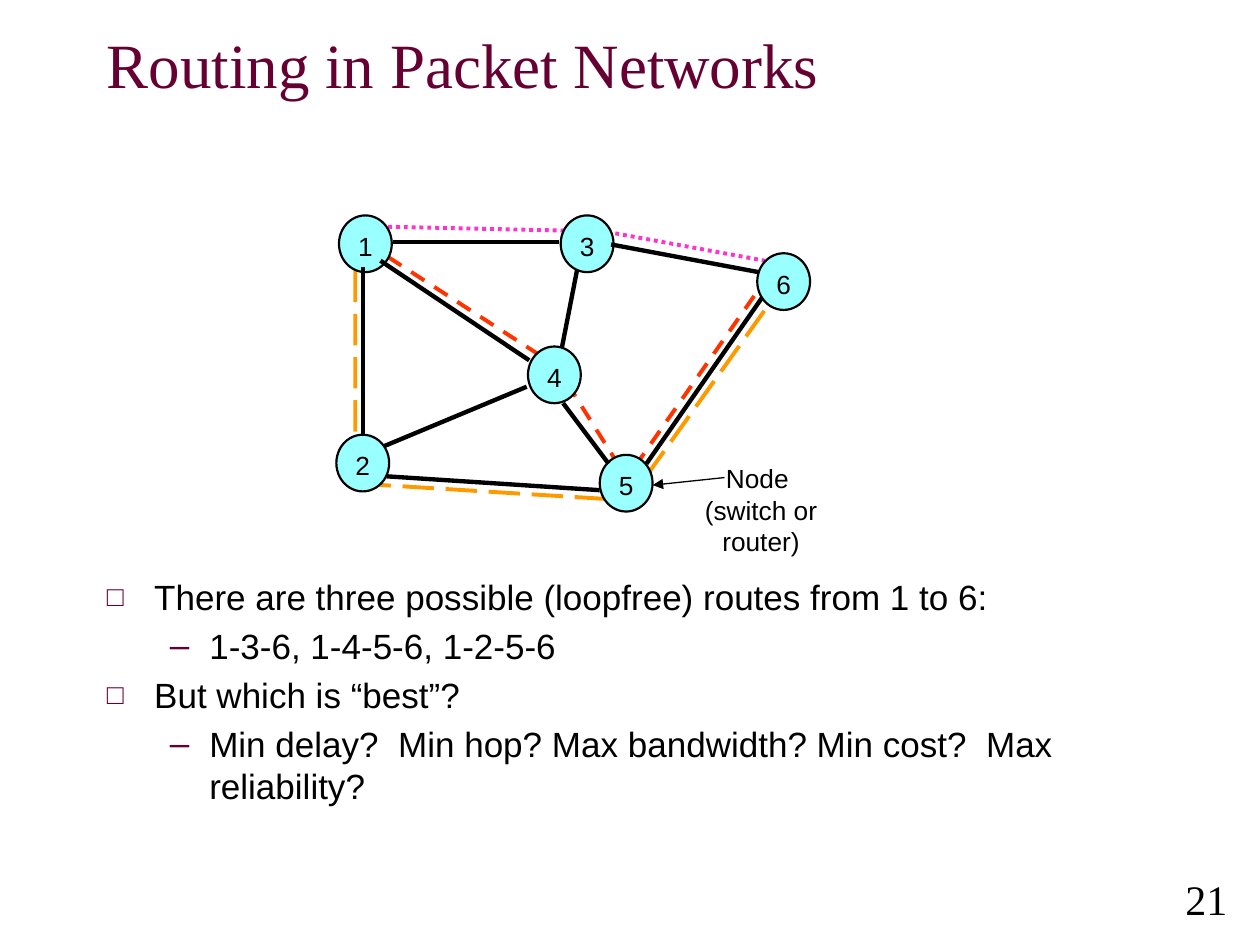
"""Build a slide on routing in packet networks: a six-node graph with three routes."""
from lxml import etree
from pptx import Presentation
from pptx.dml.color import RGBColor
from pptx.enum.dml import MSO_LINE
from pptx.enum.shapes import MSO_CONNECTOR, MSO_SHAPE
from pptx.enum.text import MSO_ANCHOR, PP_ALIGN
from pptx.oxml.ns import qn
from pptx.util import Pt

DASH, DOT, LONG_DASH = MSO_LINE.DASH, MSO_LINE.ROUND_DOT, MSO_LINE.LONG_DASH
STRAIGHT, ELLIPSE = MSO_CONNECTOR.STRAIGHT, MSO_SHAPE.OVAL
TOP, MIDDLE = MSO_ANCHOR.TOP, MSO_ANCHOR.MIDDLE
LEFT, CENTER, RIGHT = PP_ALIGN.LEFT, PP_ALIGN.CENTER, PP_ALIGN.RIGHT
BLACK, MAROON, CYAN = "000000", "660033", "99FFFF"

deck = Presentation()
deck.slide_width, deck.slide_height = Pt(720), Pt(540)
page = deck.slides.add_slide(deck.slide_layouts[6])
shapes = page.shapes


def color(value):
    return RGBColor.from_string(value)


def add_text(place, lines, size, font="Arial", tint=BLACK, align=LEFT, anchor=TOP, wrap=True, insets=(7.2, 3.6)):
    frame = shapes.add_textbox(*map(Pt, place)).text_frame
    frame.word_wrap, frame.vertical_anchor = wrap, anchor
    frame.margin_left = frame.margin_right = Pt(insets[0])
    frame.margin_top = frame.margin_bottom = Pt(insets[1])
    frame.text = "\n".join(lines)
    for para in frame.paragraphs:
        para.alignment = align
        para.font.size, para.font.name = Pt(size), font
        para.font.color.rgb = color(tint)
    return frame


add_text((618.5, 495.4, 90, 36.7), ["21"], 24, "Times New Roman", align=RIGHT)
add_text((54, 0, 612, 72), ["Routing in Packet Networks"], 36, "Times New Roman", MAROON, anchor=MIDDLE)

bullets = [
    (0, "There are three possible (loopfree) routes from 1 to 6:"),
    (1, "1-3-6, 1-4-5-6, 1-2-5-6"),
    (0, "But which is “best”?"),
    (1, "Min delay?  Min hop? Max bandwidth? Min cost?  Max reliability?"),
]
levels = [(27, 27, "80000", "□"), (58.5, 22.5, "100000", "–")]
body = add_text((54, 325.4, 617.8, 154.8), [text for _, text in bullets], 20)
for index, ((level, _), para) in enumerate(zip(bullets, body.paragraphs)):
    margin, hang, scale, mark = levels[level]
    para.level, para.line_spacing = level, Pt(24)
    para.space_before = Pt(4 if index else 0)
    props = para._p.get_or_add_pPr()
    props.set("marL", str(Pt(margin)))
    props.set("indent", str(-Pt(hang)))
    spacing_end = props.index(props.find(qn("a:defRPr")))
    tint = etree.Element(qn("a:buClr"))
    etree.SubElement(tint, qn("a:srgbClr"), val=MAROON)
    ratio = etree.Element(qn("a:buSzPct"), val=scale)
    face = etree.Element(qn("a:buFont"), typeface="Arial")
    sign = etree.Element(qn("a:buChar"), char=mark)
    for offset, element in enumerate((tint, ratio, face, sign)):
        props.insert(spacing_end + offset, element)

routes = [
    ("FF3300", DASH, [(221.8, 146.9), (307.4, 202.3), (327.6, 224.6), (352.1, 263.5),
                      (360, 265.7), (365, 263.5), (433.4, 165.6)]),
    ("FF33CC", DOT, [(221.8, 129.6), (322.6, 131.8), (350.6, 133.2), (437, 149)]),
    ("FF9900", LONG_DASH, [(203, 154.8), (203, 249.8), (200.2, 269.3), (205.2, 275.8), (218.2, 277.2),
                           (345.6, 285.1), (360.7, 286.6), (369.4, 275.8), (370.8, 270), (439.2, 174.2)]),
]
for tint, dash, points in routes:
    start, *rest = [(Pt(x), Pt(y)) for x, y in points]
    builder = shapes.build_freeform(*start)
    builder.add_line_segments(rest, close=False)
    route = builder.convert_to_shape()
    route.shadow.inherit = False
    route.fill.background()
    route.line.color.rgb = color(tint)
    route.line.width, route.line.dash_style = Pt(2.25), dash

nodes = [(193.7, 123.1), (192.2, 248.4), (320.4, 123.1), (301.7, 198), (342.7, 259.9), (432.7, 144.7)]
for number, (left, top) in enumerate(nodes, 1):
    node = shapes.add_shape(ELLIPSE, Pt(left), Pt(top), Pt(30.2), Pt(32.4))
    node.shadow.inherit = False
    node.fill.solid()
    node.fill.fore_color.rgb = color(CYAN)
    node.line.color.rgb = color(BLACK)
    node.line.width = Pt(1.25)
    frame = node.text_frame
    frame.margin_left = frame.margin_right = frame.margin_bottom = 0
    frame.margin_top = Pt(2.5)
    frame.word_wrap, frame.vertical_anchor = False, MIDDLE
    frame.text = str(number)
    para = frame.paragraphs[0]
    para.alignment = CENTER
    para.font.size, para.font.name = Pt(15), "Arial"
    para.font.color.rgb = color(BLACK)

add_text((378.7, 264.2, 112.3, 36), ["Node ", "(switch or router)"], 15, align=CENTER, wrap=False, insets=(0, 0))

links = [
    (224.6, 138.2, 319.7, 138.2), (329.8, 154.1, 321.1, 198.7), (321.8, 230.4, 347.8, 265),
    (349.2, 139.7, 433.4, 155.5), (369.4, 265, 435.6, 169.9), (342.7, 280.1, 221, 272.2),
    (207.4, 152.6, 207.4, 249.1), (217.4, 149, 302.4, 205.9), (301, 221, 219.6, 254.9),
]
pointer = (414, 272.9, 373, 277.2)
for ends in links + [pointer]:
    link = shapes.add_connector(STRAIGHT, *map(Pt, ends))
    link.line.color.rgb = color(BLACK)
    link.line.width = Pt(0.75 if ends == pointer else 2.5)
    if ends == pointer:
        etree.SubElement(link.line._get_or_add_ln(), qn("a:tailEnd"), type="triangle")
    etree.SubElement(link._element.spPr, qn("a:effectLst"))

deck.save("out.pptx")
